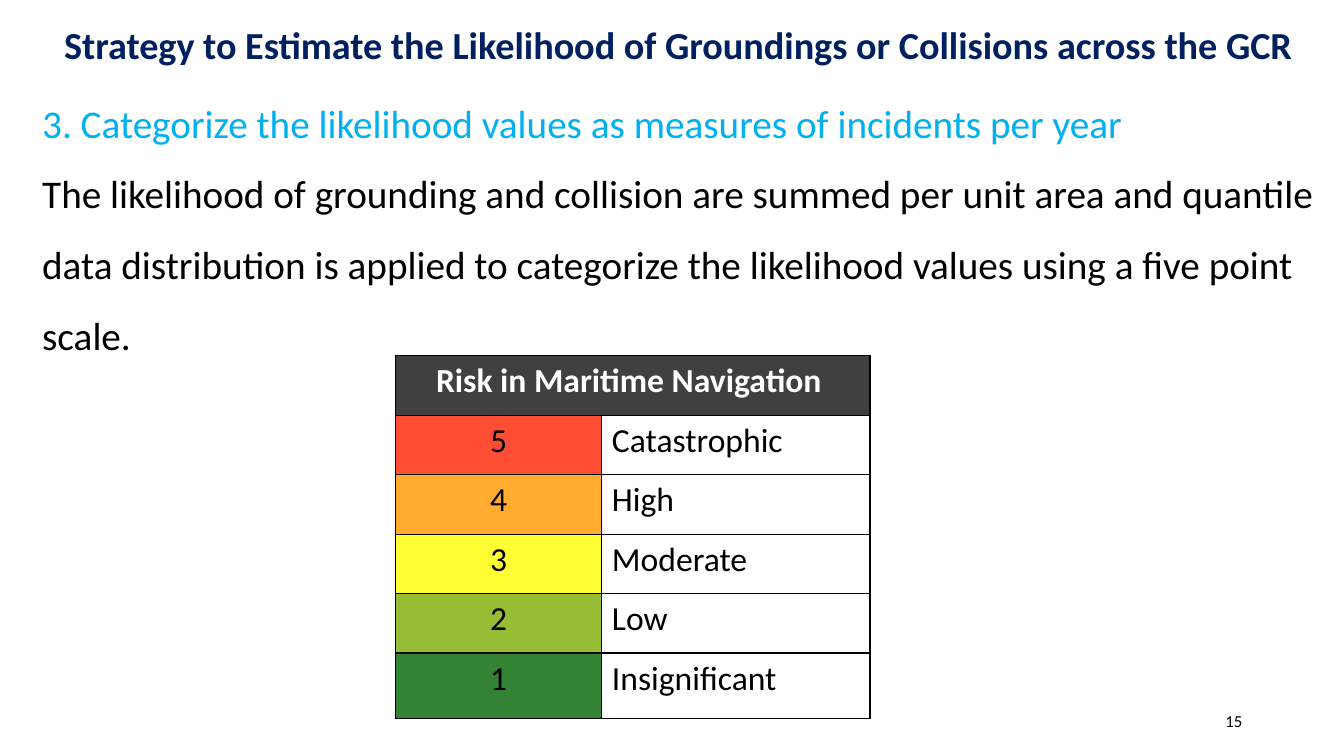
from lxml import etree
from pptx import Presentation
from pptx.dml.color import RGBColor
from pptx.enum.shapes import MSO_SHAPE
from pptx.enum.text import MSO_ANCHOR, PP_ALIGN
from pptx.oxml.ns import qn
from pptx.util import Inches, Pt

FONT = "Calibri"
BLACK = RGBColor(0x00, 0x00, 0x00)
WHITE = RGBColor(0xFF, 0xFF, 0xFF)
NAVY = RGBColor(0x00, 0x20, 0x60)
SKY = RGBColor(0x00, 0xB0, 0xF0)
CHARCOAL = RGBColor(0x40, 0x40, 0x40)

RISK_LEVELS = [
    ("5", "Catastrophic", RGBColor(0xFF, 0x4E, 0x34)),
    ("4", "High", RGBColor(0xFF, 0xAC, 0x2F)),
    ("3", "Moderate", RGBColor(0xFF, 0xFF, 0x33)),
    ("2", "Low", RGBColor(0x97, 0xBD, 0x34)),
    ("1", "Insignificant", RGBColor(0x34, 0x83, 0x34)),
]


def write(paragraph, text, size, color, bold=False, align=PP_ALIGN.LEFT):
    paragraph.text = text
    paragraph.alignment = align
    font = paragraph.runs[0].font
    font.name, font.size, font.bold = FONT, Pt(size), bold
    font.color.rgb = color


def add_title(slide, left, top, width, height):
    banner = slide.shapes.add_shape(MSO_SHAPE.RECTANGLE, left, top, width, height)
    banner.shadow.inherit = False
    banner.fill.solid()
    banner.fill.fore_color.rgb = WHITE
    banner.line.fill.background()
    frame = banner.text_frame
    frame.word_wrap = True
    frame.vertical_anchor = MSO_ANCHOR.MIDDLE
    heading = frame.paragraphs[0]
    write(heading,
          "Strategy to Estimate the Likelihood of Groundings or Collisions across the GCR",
          27.3, NAVY, True, PP_ALIGN.CENTER)
    heading.line_spacing = 0.9


def add_explanation(slide, left, top, width, height):
    frame = slide.shapes.add_textbox(left, top, width, height).text_frame
    frame.word_wrap = True
    step = frame.paragraphs[0]
    write(step, "3. Categorize the likelihood values as measures of incidents per year",
          28, SKY)
    method = frame.add_paragraph()
    write(method,
          "The likelihood of grounding and collision are summed per unit area and quantile "
          "data distribution is applied to categorize the likelihood values using a five "
          "point scale.", 28, BLACK)
    for paragraph in (step, method):
        paragraph.line_spacing = 1.5


def style_cell(cell, fill=None):
    """Give the cell 1 pt black borders and its fill, if any."""
    properties = cell._tc.get_or_add_tcPr()
    for side in ("a:lnL", "a:lnR", "a:lnT", "a:lnB"):
        border = etree.SubElement(properties, qn(side), w=str(Pt(1)))
        solid = etree.SubElement(border, qn("a:solidFill"))
        etree.SubElement(solid, qn("a:srgbClr"), val=str(BLACK))
    if fill is None:
        cell.fill.background()
    else:
        cell.fill.solid()
        cell.fill.fore_color.rgb = fill


def add_risk_scale(slide, left, top, width, height):
    rows = len(RISK_LEVELS) + 1
    scale = slide.shapes.add_table(rows, 2, left, top, width, height).table
    scale.columns[0].width = Inches(2.05)
    scale.columns[1].width = width - Inches(2.05)
    row_height = Inches(0.59)
    for row in scale.rows:
        row.height = row_height
    scale.rows[rows - 1].height = height - row_height * (rows - 1)

    header = scale.cell(0, 0)
    header.merge(scale.cell(0, 1))
    for column in range(2):
        style_cell(scale.cell(0, column), CHARCOAL)
    write(header.text_frame.paragraphs[0], "Risk in Maritime Navigation ",
          24, WHITE, True, PP_ALIGN.CENTER)

    for row, (score, label, color) in enumerate(RISK_LEVELS, start=1):
        score_cell, label_cell = scale.cell(row, 0), scale.cell(row, 1)
        style_cell(score_cell, color)
        style_cell(label_cell)
        write(score_cell.text_frame.paragraphs[0], score, 24, BLACK,
              align=PP_ALIGN.CENTER)
        write(label_cell.text_frame.paragraphs[0], label, 24, BLACK)


def add_page_number(slide, left, top, width, height):
    frame = slide.shapes.add_textbox(left, top, width, height).text_frame
    frame.word_wrap = True
    frame.vertical_anchor = MSO_ANCHOR.MIDDLE
    write(frame.paragraphs[0], "15", 12, BLACK, align=PP_ALIGN.RIGHT)


def main():
    deck = Presentation()
    deck.slide_width, deck.slide_height = Inches(13.33), Inches(7.5)
    slide = deck.slides.add_slide(deck.slide_layouts[6])
    margin, content_width = Inches(0.32), Inches(12.81)
    add_page_number(slide, Inches(9.42), Inches(6.95), Inches(3), Inches(0.4))
    add_explanation(slide, margin, Inches(0.7), content_width, Inches(2.86))
    add_risk_scale(slide, Inches(3.92), Inches(3.53), Inches(4.71), Inches(3.6))
    add_title(slide, margin, 0, content_width, Inches(0.93))
    deck.save("out.pptx")


if __name__ == "__main__":
    main()
